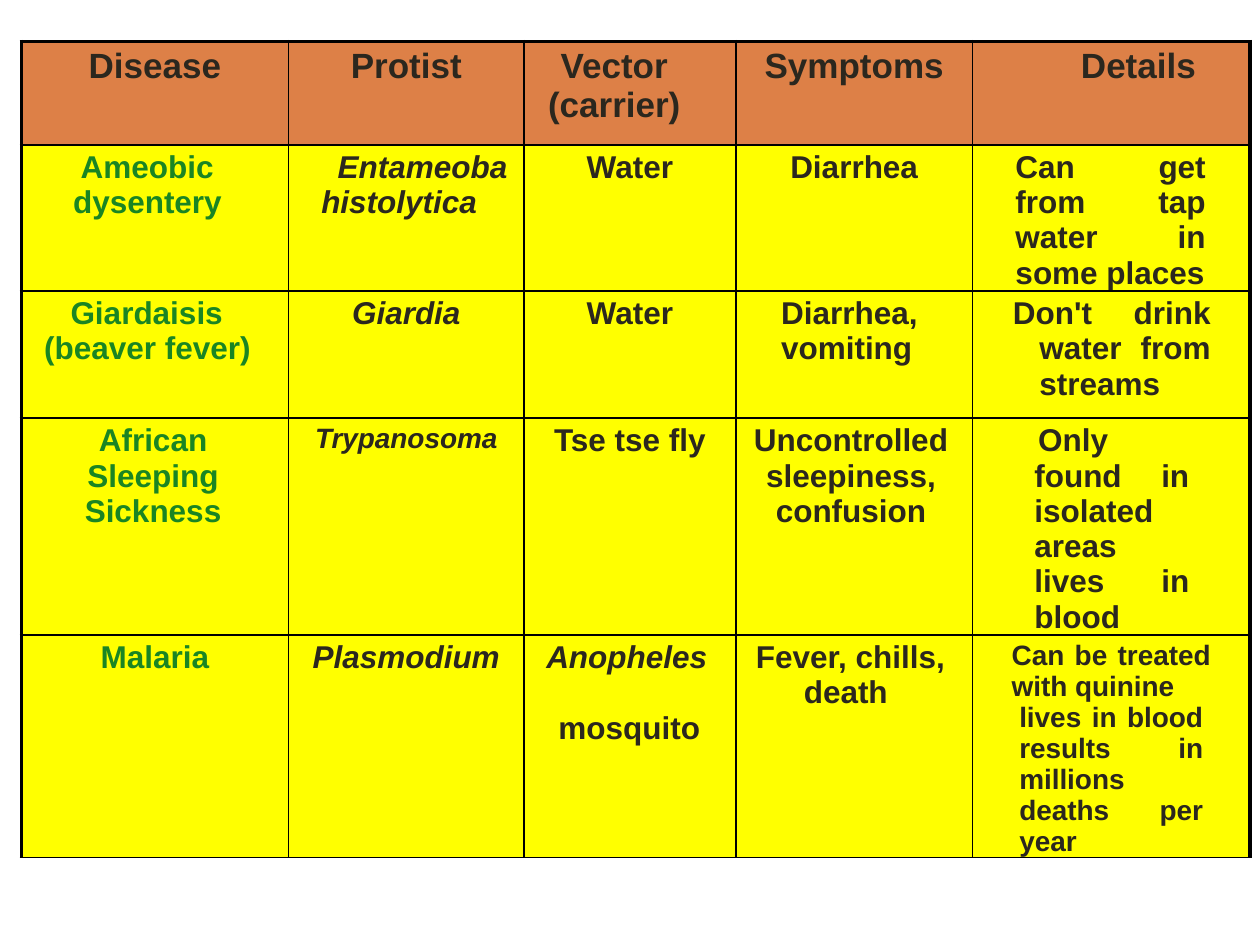
"""Build a slide with a table of diseases that protists cause."""
from lxml.etree import SubElement
from pptx import Presentation
from pptx.dml.color import RGBColor
from pptx.enum.text import PP_ALIGN
from pptx.oxml.ns import qn
from pptx.util import Inches, Pt

INK = RGBColor(0x2B, 0x27, 0x1E)
GREEN = RGBColor(0x1A, 0x85, 0x23)
ORANGE = RGBColor(0xDD, 0x80, 0x47)
YELLOW = RGBColor(0xFF, 0xFF, 0x00)
BLACK = RGBColor(0, 0, 0)

LEFT, MID, JUST = PP_ALIGN.LEFT, PP_ALIGN.CENTER, PP_ALIGN.JUSTIFY
COLS = (2.12, 1.87, 1.68, 1.88, 2.2)
ROWS = (0.82, 1.08, 1.01, 1.34, 1.54)
THIN, THICK = 1, 2.25


def part(text, **form):
    """Pair a paragraph's text with its format."""
    return text, form


def name(text, **form):
    """Describe a green disease name."""
    return part(text, color=GREEN, **form)


def latin(text, **form):
    """Describe an italic species name."""
    return part(text, italic=True, **form)


def note(text, left, right, **form):
    """Describe a justified paragraph of details."""
    return part(text, align=JUST, left=left, right=right, **form)


HEAD = (
    [part("Disease")],
    [part("Protist")],
    [part("Vector (carrier)", align=LEFT, left=0.19, first=0.1)],
    [part("Symptoms")],
    [part("Details", align=LEFT, left=0.86)],
)
BODY = (
    (
        [name("Ameobic", align=LEFT, left=0.47),
         name("dysentery", align=LEFT, left=0.41, before=0)],
        [latin("Entameoba", align=LEFT, left=0.39),
         latin("histolytica", align=LEFT, left=0.26, before=0)],
        [part("Water")],
        [part("Diarrhea")],
        [note("Can get from tap water in some places", 0.34, 0.35)],
    ),
    (
        [name("Giardaisis (beaver fever)", align=LEFT, left=0.18, first=0.21)],
        [latin("Giardia")],
        [part("Water")],
        [part("Diarrhea, vomiting", align=LEFT, left=0.36)],
        [note("Don't drink water from streams", 0.53, 0.31, first=-0.21)],
    ),
    (
        [name("African Sleeping Sickness", left=0.46, right=0.49)],
        [latin("Trypanosoma", size=16)],
        [part("Tse tse fly")],
        [part("Uncontrolled sleepiness, confusion", left=0.12, right=0.17)],
        [note("Only found in isolated areas lives in blood", 0.49, 0.48, first=0.03)],
    ),
    (
        [name("Malaria", before=28)],
        [latin("Plasmodium")],
        [latin("Anopheles", left=0.15, right=0.2),
         part("mosquito", left=0.15, right=0.16, before=20.3)],
        [part("Fever, chills, death", align=LEFT, left=0.54, first=-0.38)],
        [note("Can be treated with quinine", 0.31, 0.31, size=16),
         note("lives in blood results in millions deaths per year",
              0.37, 0.37, size=16, before=0)],
    ),
)


def write(para, text, size=18, color=INK, italic=False, align=MID,
          left=0, right=0, first=0, before=3.1):
    """Put text in a paragraph and format it."""
    para.alignment = align
    para.space_before = Pt(before)
    props = para._p.get_or_add_pPr()
    for key, gap in (("marL", left), ("marR", right), ("indent", first)):
        props.set(key, str(Inches(gap)))
    run = para.add_run()
    run.text = text
    font = run.font
    font.name, font.size = "Arial", Pt(size)
    font.bold, font.italic = True, italic
    font.color.rgb = color


def edge(cell, side, width):
    """Draw one border of a cell."""
    line = SubElement(cell._tc.get_or_add_tcPr(), qn(f"a:ln{side}"), w=str(Pt(width)))
    fill = SubElement(line, qn("a:solidFill"))
    SubElement(fill, qn("a:srgbClr"), val=str(BLACK))


def dress(cell, row, col):
    """Set a cell's margins, borders and fill."""
    cell.margin_left = cell.margin_right = cell.margin_bottom = 0
    cell.margin_top = Inches(0.04)
    edge(cell, "L", THIN if col else THICK)
    edge(cell, "R", THICK if col == len(COLS) - 1 else THIN)
    edge(cell, "T", THIN if row else THICK)
    edge(cell, "B", THIN)
    cell.fill.solid()
    cell.fill.fore_color.rgb = YELLOW if row else ORANGE


def fill(cell, parts, size):
    """Write each part as a paragraph of the cell."""
    frame = cell.text_frame
    frame.word_wrap = True
    for i, (text, form) in enumerate(parts):
        para = frame.add_paragraph() if i else frame.paragraphs[0]
        write(para, text, **{"size": size, **form})


def grid(slide):
    """Add the table of diseases."""
    frame = slide.shapes.add_table(
        len(ROWS), len(COLS), Inches(0.17), Inches(0.33),
        Inches(sum(COLS)), Inches(sum(ROWS)))
    table = frame.table
    table.first_row = table.horz_banding = False
    for col, width in zip(table.columns, COLS):
        col.width = Inches(width)
    for row, height in zip(table.rows, ROWS):
        row.height = Inches(height)
    frame.height = Inches(6.84)
    for r, line in enumerate((HEAD, *BODY)):
        for c, parts in enumerate(line):
            cell = table.cell(r, c)
            dress(cell, r, c)
            fill(cell, parts, 18 if r else 20)


def main():
    """Make and save the slide."""
    deck = Presentation()
    deck.slide_width, deck.slide_height = Inches(10), Inches(7.5)
    grid(deck.slides.add_slide(deck.slide_layouts[6]))
    deck.save("out.pptx")


if __name__ == "__main__":
    main()
